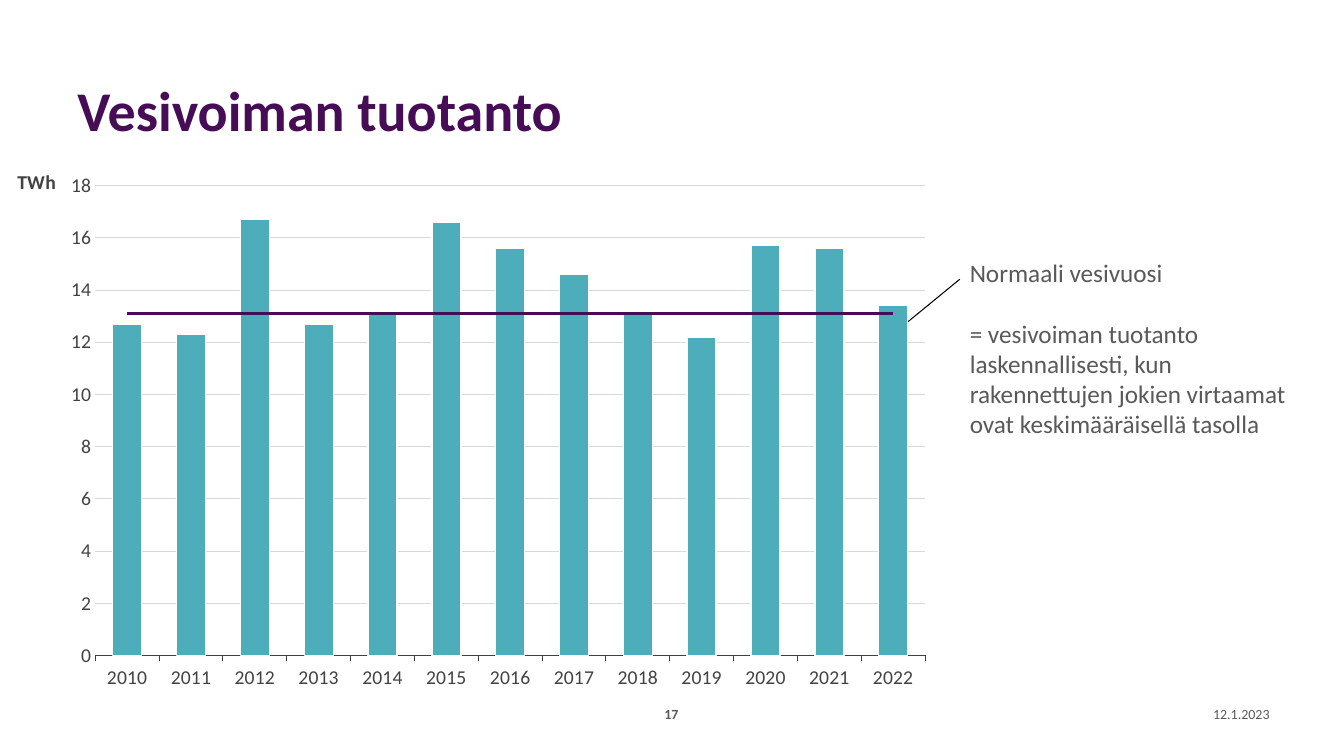
from lxml.etree import SubElement
from pptx import Presentation
from pptx.chart.data import CategoryChartData
from pptx.dml.color import RGBColor
from pptx.enum.chart import XL_CHART_TYPE, XL_MARKER_STYLE, XL_TICK_MARK
from pptx.enum.shapes import MSO_CONNECTOR
from pptx.enum.text import MSO_ANCHOR, PP_ALIGN
from pptx.oxml import parse_xml
from pptx.oxml.ns import nsdecls, qn
from pptx.util import Inches, Pt

PURPLE = RGBColor(0x46, 0x0D, 0x56)
TEAL = RGBColor(0x4E, 0xAD, 0xBB)
GRAY = RGBColor(0x59, 0x59, 0x59)
LABEL_GRAY = RGBColor(0x42, 0x42, 0x42)
AXIS_GRAY = RGBColor(0x40, 0x40, 0x40)
GRID_GRAY = RGBColor(0xD9, 0xD9, 0xD9)
WHITE = RGBColor(0xFF, 0xFF, 0xFF)
BLACK = RGBColor(0x00, 0x00, 0x00)
FONT = "Calibri"

presentation = Presentation()
presentation.slide_width = Inches(13.33)
presentation.slide_height = Inches(7.5)
slide = presentation.slides.add_slide(presentation.slide_layouts[6])


def add_text(text, left, top, width, height, size, color=GRAY, bold=False,
             align=PP_ALIGN.LEFT, anchor=MSO_ANCHOR.MIDDLE, line_spacing=1.0, gap=0):
    box = slide.shapes.add_textbox(Inches(left), Inches(top), Inches(width), Inches(height))
    frame = box.text_frame
    frame.word_wrap = True
    frame.vertical_anchor = anchor
    frame.text = text
    for index, paragraph in enumerate(frame.paragraphs):
        paragraph.alignment = align
        paragraph.line_spacing = line_spacing
        if index:
            paragraph.space_before = Pt(gap)
        paragraph.font.name = FONT
        paragraph.font.size = Pt(size)
        paragraph.font.bold = bold
        paragraph.font.color.rgb = color


def set_layout(element, position, **settings):
    for old_layout in element.findall(qn("c:layout")):
        element.remove(old_layout)
    layout = parse_xml(f"<c:layout {nsdecls('c')}><c:manualLayout/></c:layout>")
    for name, value in settings.items():
        SubElement(layout[0], qn(f"c:{name}")).set("val", str(value))
    element.insert(position, layout)


add_text("Vesivoiman tuotanto", 0.67, 0.4, 10.37, 1.45, size=40, color=PURPLE,
         bold=True, line_spacing=0.9)
add_text("12.1.2023", 11.58, 6.95, 1.11, 0.27, size=10, align=PP_ALIGN.RIGHT)
add_text("17", 6.36, 6.95, 0.6, 0.27, size=10, bold=True, align=PP_ALIGN.CENTER)
add_text("Normaali vesivuosi\n= vesivoiman tuotanto laskennallisesti, kun rakennettujen "
         "jokien virtaamat ovat keskimääräisellä tasolla",
         9.52, 2.5, 3.46, 1.92, size=18, anchor=MSO_ANCHOR.TOP, gap=22)

arrow = slide.shapes.add_connector(
    MSO_CONNECTOR.STRAIGHT, Inches(9.52), Inches(2.77), Inches(8.8), Inches(3.36))
arrow.line.color.rgb = BLACK
arrow.line.width = Pt(0.75)
SubElement(arrow.line._get_or_add_ln(), qn("a:tailEnd")).set("type", "triangle")
SubElement(arrow._element.spPr, qn("a:effectLst"))

production = [12.7, 12.3, 16.7, 12.7, 13.2, 16.6, 15.6, 14.6, 13.1, 12.2, 15.7, 15.6, 13.4]
chart_data = CategoryChartData()
chart_data.categories = [str(year) for year in range(2010, 2023)]
chart_data.add_series("Vesivoiman tuotanto", production)
chart_data.add_series("Normaali vesivuosi", [13.1] * len(production))
chart = slide.shapes.add_chart(
    XL_CHART_TYPE.COLUMN_CLUSTERED, Inches(0.1), Inches(1.49), Inches(9.29), Inches(5.85),
    chart_data).chart
chart.has_legend = False
chart.has_title = False
chart.font.name = FONT
chart.font.size = Pt(14)
chart.font.color.rgb = LABEL_GRAY

column_plot = chart.plots[0]
column_plot.gap_width = 120
column_plot.vary_by_categories = False
columns = column_plot.series[0]
columns.format.fill.solid()
columns.format.fill.fore_color.rgb = TEAL
columns.format.line.color.rgb = WHITE
columns.format.line.width = Pt(1)

bar_chart = columns._element.getparent()
normal_element = bar_chart.findall(qn("c:ser"))[1]
for bar_setting in normal_element.findall(qn("c:invertIfNegative")):
    normal_element.remove(bar_setting)
line_chart = parse_xml(
    f"<c:lineChart {nsdecls('c')}><c:grouping val='standard'/><c:varyColors val='0'/></c:lineChart>")
line_chart.append(normal_element)
SubElement(line_chart, qn("c:marker")).set("val", "1")
for axis_id in bar_chart.findall(qn("c:axId")):
    SubElement(line_chart, qn("c:axId")).set("val", axis_id.get("val"))
bar_chart.addnext(line_chart)

normal_line = chart.plots[1].series[0]
normal_line.smooth = False
normal_line.marker.style = XL_MARKER_STYLE.NONE
normal_line.format.line.color.rgb = PURPLE
normal_line.format.line.width = Pt(2)

set_layout(bar_chart.getparent(), 0, layoutTarget="inner", xMode="edge", yMode="edge",
           x=0.091, y=0.06, w=0.886, h=0.797)

category_axis = chart.category_axis
category_axis.major_tick_mark = XL_TICK_MARK.OUTSIDE
category_axis.format.line.color.rgb = AXIS_GRAY
category_axis.format.line.width = Pt(0.75)

value_axis = chart.value_axis
value_axis.minimum_scale = 0
value_axis.maximum_scale = 18
value_axis.major_unit = 2
value_axis.major_tick_mark = XL_TICK_MARK.NONE
value_axis.format.line.fill.background()
value_axis.major_gridlines.format.line.color.rgb = GRID_GRAY
value_axis.major_gridlines.format.line.width = Pt(0.5)
value_axis.tick_labels.number_format = "General"
value_axis.tick_labels.number_format_is_linked = False

for axis in (category_axis, value_axis):
    axis.tick_labels.font.name = FONT
    axis.tick_labels.font.size = Pt(14)
    axis.tick_labels.font.color.rgb = LABEL_GRAY

axis_title = value_axis.axis_title
axis_title.text_frame.text = "TWh"
title_font = axis_title.text_frame.paragraphs[0].runs[0].font
title_font.name = FONT
title_font.size = Pt(14)
title_font.bold = True
title_font.color.rgb = LABEL_GRAY
for title_body in axis_title._element.iter(qn("a:bodyPr")):
    title_body.set("rot", "0")
    title_body.set("vert", "horz")
set_layout(axis_title._element, 1, xMode="edge", yMode="edge", x=0.004, y=0.025)

presentation.save("out.pptx")
